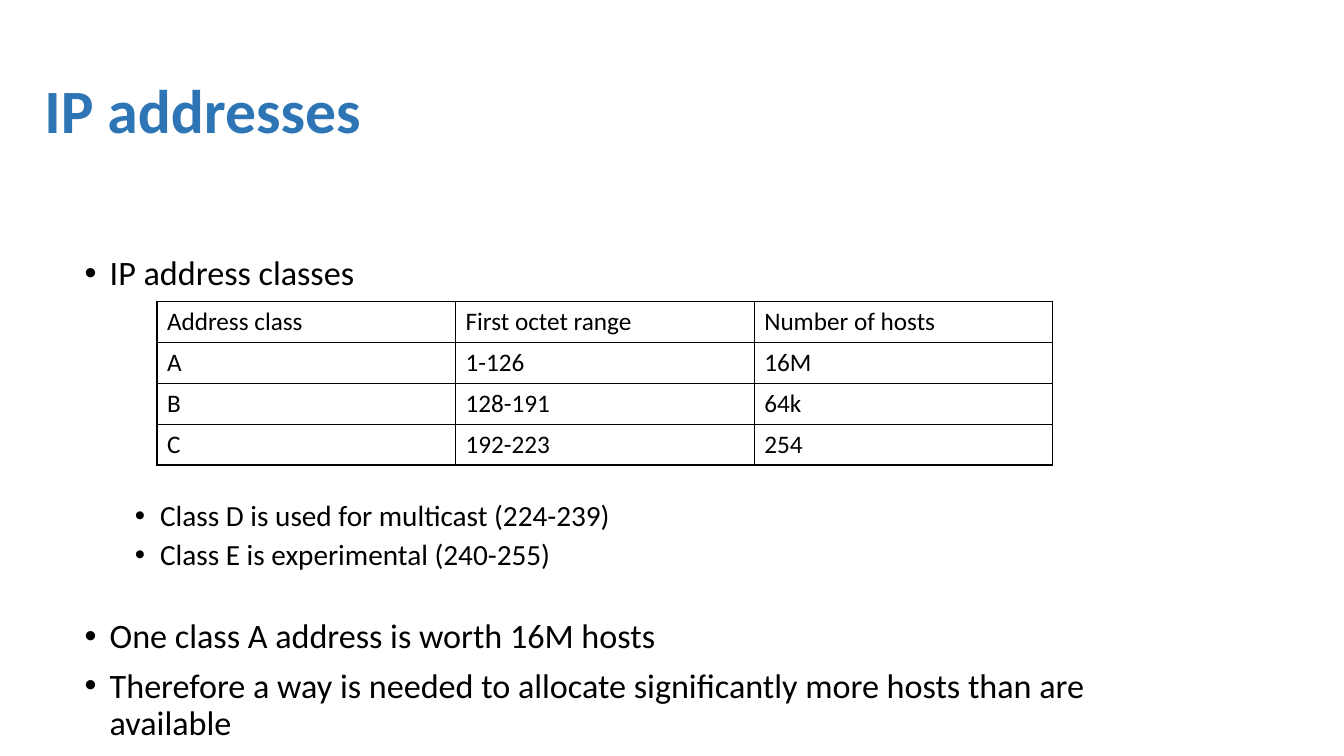
from lxml.etree import SubElement
from pptx import Presentation
from pptx.dml.color import RGBColor
from pptx.enum.text import MSO_ANCHOR, PP_ALIGN
from pptx.oxml.ns import qn
from pptx.util import Pt

BLUE = RGBColor(0x2E, 0x75, 0xB6)
BLACK = RGBColor(0x00, 0x00, 0x00)
FONT = "Calibri"

TITLE_BOX = (24.5, 28.8, 913, 104.4)
BODY_BOX = (53.3, 179.3, 771, 329.8)
TABLE_BOX = (112.1, 215.3, 640, 117)

# Text, level, space before; the larger gaps leave room for the table and set off the conclusion
BULLETS = [
    ("IP address classes", 0, 0),
    ("Class D is used for multicast (224-239)", 1, 149),
    ("Class E is experimental (240-255)", 1, 5),
    ("One class A address is worth 16M hosts", 0, 34),
    ("Therefore a way is needed to allocate significantly more hosts than are available", 0, 9),
]
LEVEL_SIZES = (24.4, 20.9)
LEVEL_INDENTS = (18, 54)
HANGING = 18

ADDRESS_CLASSES = [
    ("Address class", "First octet range", "Number of hosts"),
    ("A", "1-126", "16M"),
    ("B", "128-191", "64k"),
    ("C", "192-223", "254"),
]


def write(para, text, size, color=BLACK, bold=False, line_spacing=1.0, space_before=0):
    para.alignment = PP_ALIGN.LEFT
    para.line_spacing = line_spacing
    para.space_before = Pt(space_before)
    span = para.add_run()
    span.text = text
    span.font.name = FONT
    span.font.size = Pt(size)
    span.font.bold = bold
    span.font.color.rgb = color


def add_bullet(para, level):
    para.level = level
    properties = para._p.get_or_add_pPr()
    properties.set("marL", str(Pt(LEVEL_INDENTS[level])))
    properties.set("indent", str(-Pt(HANGING)))
    SubElement(properties, qn("a:buFont"), typeface="Arial")
    SubElement(properties, qn("a:buChar"), char="•")


def add_borders(cell):
    properties = cell._tc.get_or_add_tcPr()
    for side in ("lnL", "lnR", "lnT", "lnB"):
        line = SubElement(properties, qn(f"a:{side}"), w=str(Pt(1)))
        fill = SubElement(line, qn("a:solidFill"))
        SubElement(fill, qn("a:srgbClr"), val=str(BLACK))


def fill_title(page, box):
    title = page.shapes.title
    title.left, title.top, title.width, title.height = map(Pt, box)
    frame = title.text_frame
    frame.word_wrap = True
    frame.vertical_anchor = MSO_ANCHOR.MIDDLE
    write(frame.paragraphs[0], "IP addresses", 44, color=BLUE, bold=True, line_spacing=0.9)


def add_body(page, box):
    frame = page.shapes.add_textbox(*map(Pt, box)).text_frame
    frame.word_wrap = True
    for index, (text, level, gap) in enumerate(BULLETS):
        para = frame.add_paragraph() if index else frame.paragraphs[0]
        add_bullet(para, level)
        write(para, text, LEVEL_SIZES[level], line_spacing=0.9, space_before=gap)


def add_class_table(page, box):
    row_count, column_count = len(ADDRESS_CLASSES), len(ADDRESS_CLASSES[0])
    table = page.shapes.add_table(row_count, column_count, *map(Pt, box)).table
    table.first_row = False
    table.horz_banding = False
    for row, values in enumerate(ADDRESS_CLASSES):
        for column, value in enumerate(values):
            cell = table.cell(row, column)
            add_borders(cell)
            cell.fill.background()
            write(cell.text_frame.paragraphs[0], value, 18)


def main():
    deck = Presentation()
    deck.slide_width, deck.slide_height = Pt(960), Pt(540)
    page = deck.slides.add_slide(deck.slide_layouts[5])
    fill_title(page, TITLE_BOX)
    add_body(page, BODY_BOX)
    add_class_table(page, TABLE_BOX)
    deck.save("out.pptx")


if __name__ == "__main__":
    main()
